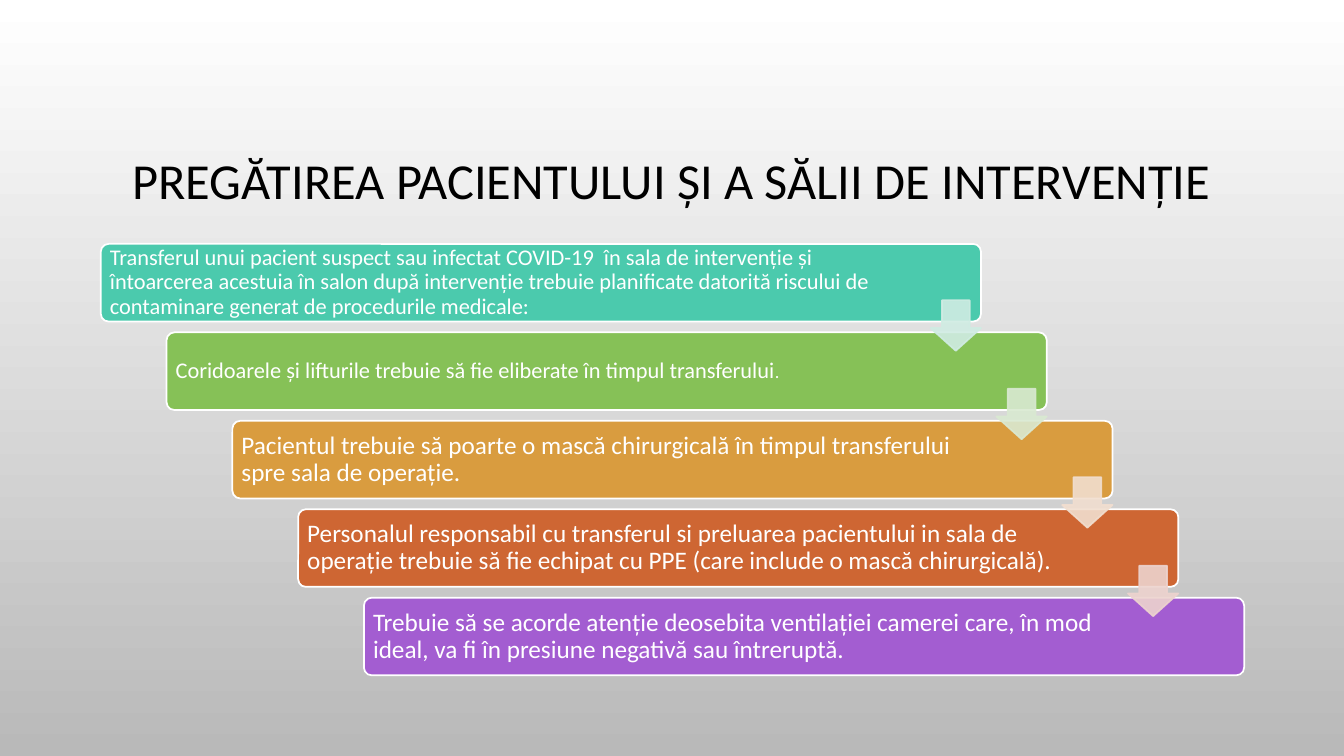
"""Build the slide on preparing the patient and the operating room."""
from dataclasses import dataclass

from lxml.etree import SubElement
from pptx import Presentation
from pptx.dml.color import RGBColor
from pptx.enum.shapes import MSO_SHAPE as Form
from pptx.enum.text import MSO_ANCHOR as Anchor, MSO_AUTO_SIZE as Fit, PP_ALIGN as Align
from pptx.oxml.ns import qn
from pptx.util import Inches, Pt

BLACK = RGBColor(0x00, 0x00, 0x00)
WHITE = RGBColor(0xFF, 0xFF, 0xFF)
GREY = RGBColor(0xB9, 0xB9, 0xB9)
TEAL = RGBColor(0x4B, 0xCA, 0xAD)
GREEN = RGBColor(0x86, 0xC1, 0x57)
GOLD = RGBColor(0xD9, 0x9C, 0x3F)
RUST = RGBColor(0xCE, 0x66, 0x33)
PLUM = RGBColor(0xA3, 0x5D, 0xD1)
MINT = RGBColor(0xD0, 0xEC, 0xE3)
LIME = RGBColor(0xD9, 0xE9, 0xD1)
SAND = RGBColor(0xF1, 0xDE, 0xCF)
ROSE = RGBColor(0xED, 0xD3, 0xCE)

FONT = "Calibri"
LEFT, TOP = 1.0, 2.42
WIDE, HIGH = 8.73, 0.77
STEP_X = (3.61 - LEFT) / 4
STEP_Y = (5.93 - TOP) / 4


@dataclass
class Phrase:
    text: str
    size: int


@dataclass
class Step:
    phrases: list[Phrase]
    fill: RGBColor
    arrow: RGBColor | None = None
    wrap: float = 7.53


STEPS = [
    Step([Phrase("Transferul unui pacient suspect sau infectat COVID-19  în sala de "
                 "intervenție și întoarcerea acestuia în salon după intervenție trebuie "
                 "planificate datorită riscului de contaminare generat de procedurile "
                 "medicale:", 16)], TEAL, MINT, 7.8),
    Step([Phrase("Coridoarele și lifturile trebuie să fie eliberate în timpul "
                 "transferului", 16), Phrase(".", 13)], GREEN, LIME),
    Step([Phrase("Pacientul trebuie să poarte o mască chirurgicală în timpul "
                 "transferului spre sala de operație.", 18)], GOLD, SAND),
    Step([Phrase("Personalul responsabil cu transferul si preluarea pacientului in sala "
                 "de operație trebuie să fie echipat cu PPE (care include o mască "
                 "chirurgicală).", 18)], RUST, ROSE),
    Step([Phrase("Trebuie să se acorde atenție deosebita ventilației camerei care, în "
                 "mod ideal, va fi în presiune negativă sau întreruptă.", 18)], PLUM),
]


def write(frame, phrases: list[Phrase], color: RGBColor, align: Align) -> None:
    """Write the phrases as runs of one paragraph."""
    frame.word_wrap = True
    frame.auto_size = Fit.NONE
    frame.vertical_anchor = Anchor.MIDDLE
    para = frame.paragraphs[0]
    para.alignment = align
    para.line_spacing = 0.9
    for phrase in phrases:
        run = para.add_run()
        run.text = phrase.text
        run.font.name = FONT
        run.font.size = Pt(phrase.size)
        run.font.color.rgb = color


def draw(slide, form: Form, x: float, y: float, w: float, h: float,
         fill: RGBColor, line: RGBColor, adjust: list[float]):
    """Add a flat preset shape."""
    shape = slide.shapes.add_shape(form, Inches(x), Inches(y), Inches(w), Inches(h))
    shape.shadow.inherit = False
    shape.fill.solid()
    shape.fill.fore_color.rgb = fill
    shape.line.color.rgb = line
    shape.line.width = Pt(1.25)
    for i, value in enumerate(adjust):
        shape.adjustments[i] = value
    return shape


def add_step(slide, step: Step, x: float, y: float) -> None:
    """Add a coloured bar and its text."""
    draw(slide, Form.ROUNDED_RECTANGLE, x, y, WIDE, HIGH, step.fill, WHITE, [0.1])
    box = slide.shapes.add_textbox(Inches(x + 0.02), Inches(y + 0.02),
                                   Inches(step.wrap), Inches(0.73))
    frame = box.text_frame
    frame.margin_left = frame.margin_right = Inches(0.07)
    frame.margin_top = frame.margin_bottom = Inches(0.07)
    write(frame, step.phrases, WHITE, Align.LEFT)


def add_arrow(slide, color: RGBColor, x: float, y: float) -> None:
    """Add a slightly transparent arrow that leads to the next bar."""
    arrow = draw(slide, Form.DOWN_ARROW, x + 8.23, y + 0.56, 0.5, 0.5,
                 color, color, [0.55, 0.45])
    for tint in arrow.element.spPr.iter(qn("a:srgbClr")):
        SubElement(tint, qn("a:alpha"), val="90000")


def add_title(slide) -> None:
    """Place and fill the title."""
    title = slide.shapes.title
    title.left, title.top = Inches(1), Inches(0.68)
    title.width, title.height = Inches(11.33), Inches(1.74)
    title.text_frame.margin_top = Inches(0.59)
    text = "PREGĂTIREA PACIENTULUI ȘI A SĂLII DE INTERVENȚIE"
    write(title.text_frame, [Phrase(text, 36)], BLACK, Align.CENTER)


def shade(slide) -> None:
    """Fill the background from white down to grey."""
    fill = slide.background.fill
    fill.gradient()
    fill.gradient_angle = 270
    for stop, color, place in zip(fill.gradient_stops, (WHITE, GREY), (0, 1)):
        stop.color.rgb = color
        stop.position = place


def main() -> None:
    """Build and save the deck."""
    deck = Presentation()
    deck.slide_width, deck.slide_height = Inches(13.33), Inches(7.5)
    slide = deck.slides.add_slide(deck.slide_layouts[5])
    shade(slide)
    add_title(slide)
    spots = [(step, LEFT + i * STEP_X, TOP + i * STEP_Y) for i, step in enumerate(STEPS)]
    for step, x, y in spots:
        add_step(slide, step, x, y)
    for step, x, y in spots:
        if step.arrow is not None:
            add_arrow(slide, step.arrow, x, y)
    deck.save("out.pptx")


if __name__ == "__main__":
    main()
